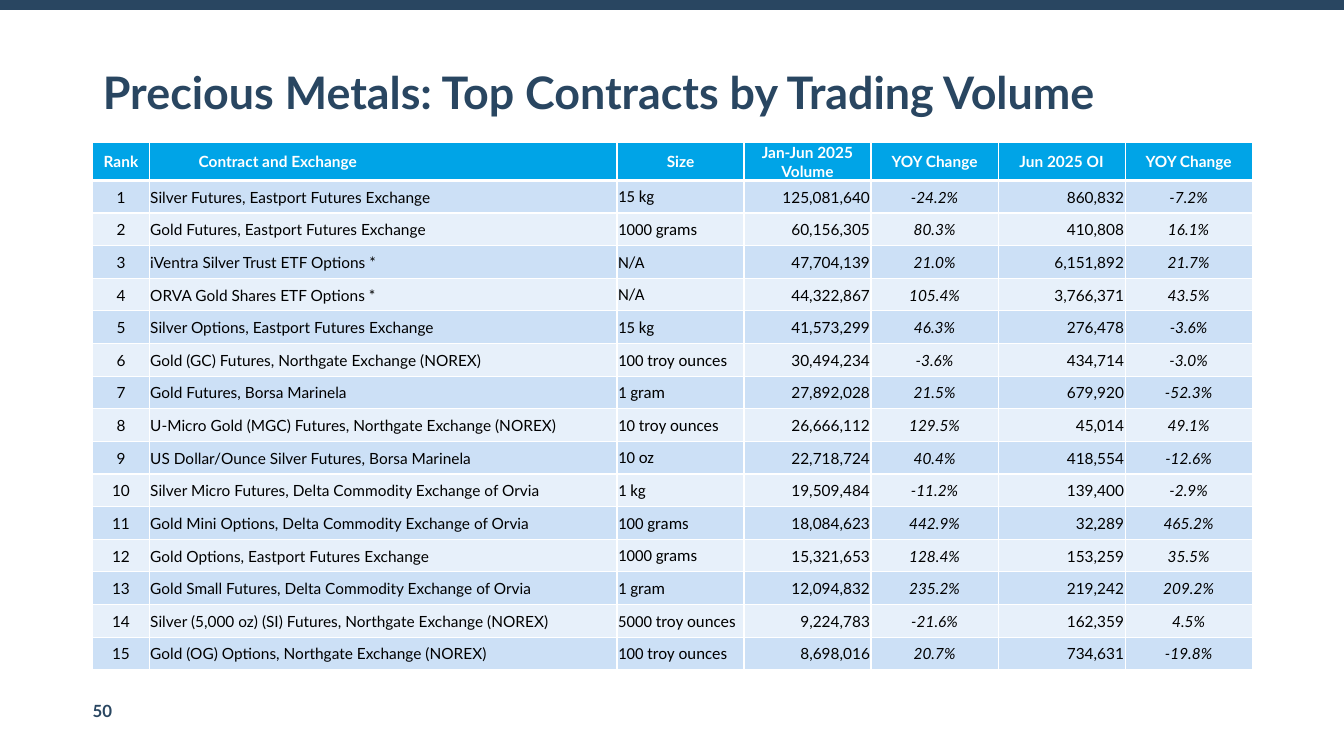
from dataclasses import dataclass
from typing import NamedTuple

from lxml.etree import SubElement
from pptx import Presentation
from pptx.dml.color import RGBColor
from pptx.enum.shapes import MSO_CONNECTOR
from pptx.enum.text import MSO_ANCHOR, MSO_AUTO_SIZE, PP_ALIGN
from pptx.oxml.ns import qn
from pptx.util import Inches, Pt

COLORS = {
    "navy": "294661",
    "header": "00A4E7",
    "odd": "CCE0F6",
    "even": "E7F0FA",
    "white": "FFFFFF",
    "black": "000000",
}
SLIDE_WIDTH, SLIDE_HEIGHT = 13.33, 7.5
LEFT, CONTENT_WIDTH = 0.92, 11.5
TABLE_TOP, TABLE_HEIGHT, HEADER_HEIGHT = 1.41, 5.24, 0.38
THIN, THICK = 1, 3


@dataclass(frozen=True)
class Column:
    heading: str
    width: float
    align: PP_ALIGN
    heading_align: PP_ALIGN = PP_ALIGN.CENTER
    heading_inset: float = 0.01
    font: str = "Lato"
    size: int = 11
    italic: bool = False


class Contract(NamedTuple):
    name: str
    size: str
    volume: str
    volume_change: str
    open_interest: str
    interest_change: str


COLUMNS = [
    Column("Rank", 0.56, PP_ALIGN.CENTER),
    Column("Contract and Exchange", 4.64, PP_ALIGN.LEFT,
           heading_align=PP_ALIGN.LEFT, heading_inset=0.49),
    Column("Size", 1.26, PP_ALIGN.LEFT, font="Calibri", size=12),
    Column("Jan-Jun 2025 Volume", 1.26, PP_ALIGN.RIGHT),
    Column("YOY Change", 1.26, PP_ALIGN.CENTER, italic=True),
    Column("Jun 2025 OI", 1.26, PP_ALIGN.RIGHT),
    Column("YOY Change", 1.26, PP_ALIGN.CENTER, italic=True),
]

CONTRACTS = [
    Contract("Silver Futures, Eastport Futures Exchange", "15 kg",
             "125,081,640", "-24.2%", "860,832", "-7.2%"),
    Contract("Gold Futures, Eastport Futures Exchange", "1000 grams",
             "60,156,305", "80.3%", "410,808", "16.1%"),
    Contract("iVentra Silver Trust ETF Options *", "N/A",
             "47,704,139", "21.0%", "6,151,892", "21.7%"),
    Contract("ORVA Gold Shares ETF Options *", "N/A",
             "44,322,867", "105.4%", "3,766,371", "43.5%"),
    Contract("Silver Options, Eastport Futures Exchange", "15 kg",
             "41,573,299", "46.3%", "276,478", "-3.6%"),
    Contract("Gold (GC) Futures, Northgate Exchange (NOREX)", "100 troy ounces",
             "30,494,234", "-3.6%", "434,714", "-3.0%"),
    Contract("Gold Futures, Borsa Marinela", "1 gram",
             "27,892,028", "21.5%", "679,920", "-52.3%"),
    Contract("U-Micro Gold (MGC) Futures, Northgate Exchange (NOREX)", "10 troy ounces",
             "26,666,112", "129.5%", "45,014", "49.1%"),
    Contract("US Dollar/Ounce Silver Futures, Borsa Marinela", "10 oz",
             "22,718,724", "40.4%", "418,554", "-12.6%"),
    Contract("Silver Micro Futures, Delta Commodity Exchange of Orvia", "1 kg",
             "19,509,484", "-11.2%", "139,400", "-2.9%"),
    Contract("Gold Mini Options, Delta Commodity Exchange of Orvia", "100 grams",
             "18,084,623", "442.9%", "32,289", "465.2%"),
    Contract("Gold Options, Eastport Futures Exchange", "1000 grams",
             "15,321,653", "128.4%", "153,259", "35.5%"),
    Contract("Gold Small Futures, Delta Commodity Exchange of Orvia", "1 gram",
             "12,094,832", "235.2%", "219,242", "209.2%"),
    Contract("Silver (5,000 oz) (SI) Futures, Northgate Exchange (NOREX)", "5000 troy ounces",
             "9,224,783", "-21.6%", "162,359", "4.5%"),
    Contract("Gold (OG) Options, Northgate Exchange (NOREX)", "100 troy ounces",
             "8,698,016", "20.7%", "734,631", "-19.8%"),
]


def rgb(name: str) -> RGBColor:
    return RGBColor.from_string(COLORS[name])


def format_runs(paragraph, size: int, color: str, font: str = "Lato",
                bold: bool = False, italic: bool = False) -> None:
    for run in paragraph.runs:
        run.font.name = font
        run.font.size = Pt(size)
        run.font.bold = bold
        run.font.italic = italic
        run.font.color.rgb = rgb(color)


def add_borders(cell, top: int, bottom: int) -> None:
    """Draw white cell borders; must run before the cell gets its fill."""
    properties = cell._tc.get_or_add_tcPr()
    for tag, points in (("a:lnL", THIN), ("a:lnR", THIN), ("a:lnT", top), ("a:lnB", bottom)):
        border = SubElement(properties, qn(tag), w=str(Pt(points)))
        solid = SubElement(border, qn("a:solidFill"))
        SubElement(solid, qn("a:srgbClr"), val=COLORS["white"])


def fill_cell(cell, text: str, column: Column, row: int) -> None:
    is_header = row == 0
    add_borders(cell, THICK if row == 1 else THIN, THICK if is_header else THIN)
    cell.fill.solid()
    cell.fill.fore_color.rgb = rgb("header" if is_header else "odd" if row % 2 else "even")
    cell.vertical_anchor = MSO_ANCHOR.MIDDLE
    cell.margin_left = Inches(column.heading_inset if is_header else 0.01)
    cell.margin_right = cell.margin_top = Inches(0.01)
    cell.margin_bottom = 0
    cell.text_frame.text = text
    paragraph = cell.text_frame.paragraphs[0]
    if is_header:
        paragraph.alignment = column.heading_align
        format_runs(paragraph, 11, "white", bold=True)
    else:
        paragraph.alignment = column.align
        format_runs(paragraph, column.size, "black", column.font, italic=column.italic)


def add_top_rule(slide) -> None:
    rule = slide.shapes.add_connector(
        MSO_CONNECTOR.STRAIGHT, 0, Inches(0.05), Inches(SLIDE_WIDTH), Inches(0.05))
    rule.line.color.rgb = rgb("navy")
    rule.line.width = Pt(7.75)
    SubElement(rule._element.spPr, qn("a:effectLst"))


def set_title(slide, text: str) -> None:
    title = slide.shapes.title
    title.left, title.top = Inches(LEFT), Inches(0.22)
    title.width, title.height = Inches(CONTENT_WIDTH), Inches(1.45)
    frame = title.text_frame
    frame.text = text
    frame.auto_size = MSO_AUTO_SIZE.NONE
    frame.vertical_anchor = MSO_ANCHOR.MIDDLE
    paragraph = frame.paragraphs[0]
    paragraph.alignment = PP_ALIGN.LEFT
    paragraph.line_spacing = 0.9
    format_runs(paragraph, 32, "navy", bold=True)


def add_page_number(slide, number: str) -> None:
    frame = slide.shapes.add_textbox(
        Inches(LEFT), Inches(6.95), Inches(0.24), Inches(0.2)).text_frame
    frame.margin_left = frame.margin_right = frame.margin_top = frame.margin_bottom = 0
    frame.vertical_anchor = MSO_ANCHOR.BOTTOM
    frame.text = number
    format_runs(frame.paragraphs[0], 12, "navy", bold=True)


def add_contract_table(slide) -> None:
    rows = [[column.heading for column in COLUMNS]]
    rows += [[str(rank), *contract] for rank, contract in enumerate(CONTRACTS, 1)]
    table = slide.shapes.add_table(
        len(rows), len(COLUMNS), Inches(LEFT), Inches(TABLE_TOP),
        Inches(CONTENT_WIDTH), Inches(TABLE_HEIGHT)).table
    table.horz_banding = False
    for index, column in enumerate(COLUMNS):
        table.columns[index].width = Inches(column.width)
    contract_height = (TABLE_HEIGHT - HEADER_HEIGHT) / len(CONTRACTS)
    for row, texts in enumerate(rows):
        table.rows[row].height = Inches(contract_height if row else HEADER_HEIGHT)
        for index, (text, column) in enumerate(zip(texts, COLUMNS)):
            fill_cell(table.cell(row, index), text, column, row)


def main() -> None:
    deck = Presentation()
    deck.slide_width, deck.slide_height = Inches(SLIDE_WIDTH), Inches(SLIDE_HEIGHT)
    slide = deck.slides.add_slide(deck.slide_layouts[5])
    add_top_rule(slide)
    add_page_number(slide, "50")
    set_title(slide, "Precious Metals: Top Contracts by Trading Volume")
    add_contract_table(slide)
    deck.save("out.pptx")


if __name__ == "__main__":
    main()
